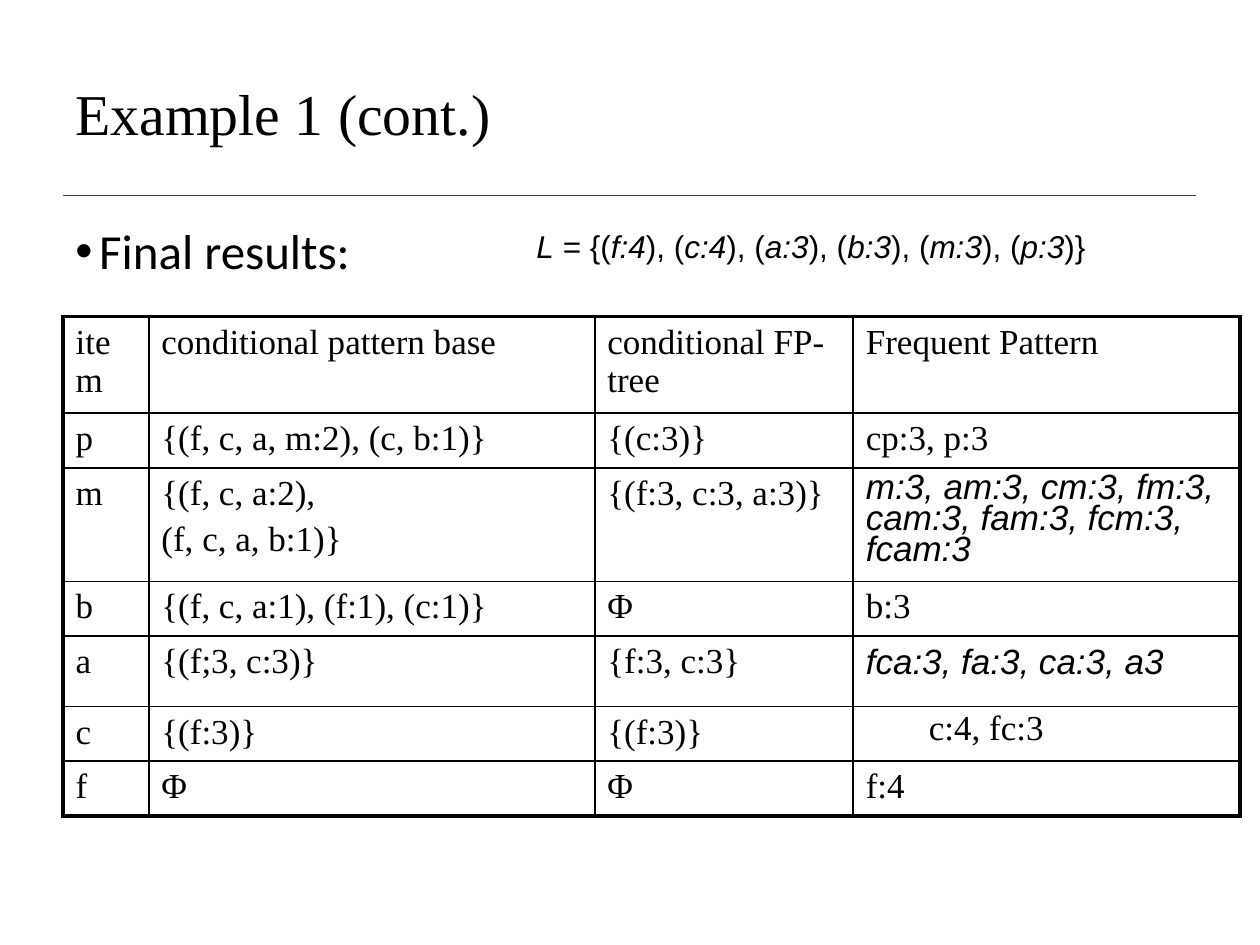
"""Build the slide with the final frequent-pattern results of Example 1."""
from dataclasses import dataclass
from typing import Any

from lxml import etree
from pptx import Presentation
from pptx import util as u
from pptx.dml.color import RGBColor
from pptx.enum import shapes, text
from pptx.oxml import ns

BLACK = RGBColor(0, 0, 0)
RULE_GRAY = RGBColor(0x40, 0x40, 0x40)
SERIF, SANS, BODY = "Times New Roman", "Arial", "Calibri"
SPACED = {"space_before": u.Pt(4)}


@dataclass(frozen=True)
class Entry:
    lines: tuple[str, ...]
    font: str = SERIF
    italic: bool = False
    spacing: Any = None


@dataclass(frozen=True)
class Caption:
    box: tuple[float, float, float, float]
    runs: tuple[str, ...]
    font: str
    size: int
    spacing: Any
    frame: Any
    alternate_italic: bool = False
    bullet: str = ""


CAPTIONS = (
    Caption((1.27, 0.76, 22.86, 3.18), ("Example 1 (cont.)",), SERIF, 33,
            {"line_spacing": 0.9},
            {"word_wrap": True, "vertical_anchor": text.MSO_ANCHOR.MIDDLE}),
    Caption((1.27, 4.45, 11.3, 13.49), ("Final results:",), BODY, 28,
            {"line_spacing": 0.9, "space_before": u.Pt(7.5)},
            {"word_wrap": True}, bullet="•"),
    Caption((10.39, 4.45, 11.86, 1.02),
            (" L", " = {(", "f:4", "), (", "c:4", "), (", "a:3", "), (",
             "b:3", "), (", "m:3", "), (", "p:3", ")}"), SANS, 18, {},
            {"word_wrap": False, "auto_size": text.MSO_AUTO_SIZE.SHAPE_TO_FIT_TEXT},
            alternate_italic=True),
)

COLUMN_WIDTHS = (1.73, 8.99, 5.21, 7.8)
ROW_HEIGHTS = (1.8, 1.09, 2.16, 1.09, 1.42, 1.09, 1.09)
RESULTS = (
    ("item", "conditional pattern base", "conditional FP-tree", "Frequent Pattern"),
    ("p", "{(f, c, a, m:2), (c, b:1)}", "{(c:3)}", "cp:3, p:3"),
    ("m", Entry(("{(f, c, a:2),", "(f, c, a, b:1)}")), "{(f:3, c:3, a:3)}",
     Entry(("m:3, am:3, cm:3, fm:3, cam:3, fam:3, fcm:3, fcam:3",), SANS, True,
           {"line_spacing": 0.8})),
    ("b", "{(f, c, a:1), (f:1), (c:1)}", "Φ", "b:3"),
    ("a", "{(f;3, c:3)}", "{f:3, c:3}", Entry(("fca:3, fa:3, ca:3, a3",), SANS, True)),
    ("c", "{(f:3)}", "{(f:3)}",
     Entry(("c:4, fc:3",), spacing={"line_spacing": 0.9, "level": 1})),
    ("f", "Φ", "Φ", "f:4"),
)


def apply(target: Any, values: dict[str, Any]) -> None:
    for name, value in values.items():
        setattr(target, name, value)


def add_run(paragraph: Any, words: str, font: str, size: int, italic: bool) -> None:
    run = paragraph.add_run()
    run.text = words
    apply(run.font, {"name": font, "size": u.Pt(size), "italic": italic})
    run.font.color.rgb = BLACK


def add_bullet(paragraph: Any, mark: str) -> None:
    properties = paragraph._p.get_or_add_pPr()
    properties.set("marL", str(u.Cm(0.48)))
    properties.set("indent", str(-u.Cm(0.48)))
    etree.SubElement(properties, ns.qn("a:buFont"), typeface=SANS)
    etree.SubElement(properties, ns.qn("a:buChar"), char=mark)


def draw_caption(slide: Any, caption: Caption) -> None:
    frame = slide.shapes.add_textbox(*map(u.Cm, caption.box)).text_frame
    apply(frame, caption.frame)
    paragraph = frame.paragraphs[0]
    apply(paragraph, caption.spacing)
    for index, words in enumerate(caption.runs):
        italic = caption.alternate_italic and index % 2 == 0
        add_run(paragraph, words, caption.font, caption.size, italic)
    if caption.bullet:
        add_bullet(paragraph, caption.bullet)


def draw_rule(slide: Any) -> None:
    rule = slide.shapes.add_connector(
        shapes.MSO_CONNECTOR.STRAIGHT, *map(u.Cm, (1.27, 3.94, 24.1, 3.94)))
    rule.line.color.rgb = RULE_GRAY
    rule.line.width = u.Pt(1)
    etree.SubElement(rule._element.spPr, ns.qn("a:effectLst"))


def draw_borders(cell: Any, outer_sides: dict[str, bool]) -> None:
    properties = cell._tc.get_or_add_tcPr()
    for position, (side, outer) in enumerate(outer_sides.items()):
        border = etree.Element(ns.qn(f"a:ln{side}"), w=str(u.Pt(2.25 if outer else 1)))
        fill = etree.SubElement(border, ns.qn("a:solidFill"))
        etree.SubElement(fill, ns.qn("a:srgbClr"), val=str(BLACK))
        properties.insert(position, border)


def fill_cell(cell: Any, entry: Entry) -> None:
    cell.fill.background()
    frame = cell.text_frame
    for index, line in enumerate(entry.lines):
        paragraph = frame.add_paragraph() if index else frame.paragraphs[0]
        apply(paragraph, entry.spacing or SPACED)
        add_run(paragraph, line, entry.font, 20, entry.italic)


def draw_results(slide: Any) -> None:
    last_row, last_column = len(ROW_HEIGHTS) - 1, len(COLUMN_WIDTHS) - 1
    table = slide.shapes.add_table(
        len(ROW_HEIGHTS), len(COLUMN_WIDTHS), u.Cm(1.27), u.Cm(6.38),
        u.Cm(sum(COLUMN_WIDTHS)), u.Cm(sum(ROW_HEIGHTS))).table
    apply(table, {"first_row": False, "horz_banding": False})
    for column, width in zip(table.columns, COLUMN_WIDTHS):
        column.width = u.Cm(width)
    for row, height in zip(table.rows, ROW_HEIGHTS):
        row.height = u.Cm(height)
    for r, entries in enumerate(RESULTS):
        for c, entry in enumerate(entries):
            cell = table.cell(r, c)
            fill_cell(cell, entry if isinstance(entry, Entry) else Entry((entry,)))
            draw_borders(cell, {"L": c == 0, "R": c == last_column,
                                "T": r == 0, "B": r == last_row})


def main() -> None:
    deck = Presentation()
    apply(deck, {"slide_width": u.Cm(25.4), "slide_height": u.Cm(19.05)})
    slide = deck.slides.add_slide(deck.slide_layouts[6])
    draw_rule(slide)
    title, heading, frequent_items = CAPTIONS
    draw_caption(slide, title)
    draw_caption(slide, heading)
    draw_results(slide)
    draw_caption(slide, frequent_items)
    deck.save("out.pptx")


if __name__ == "__main__":
    main()
